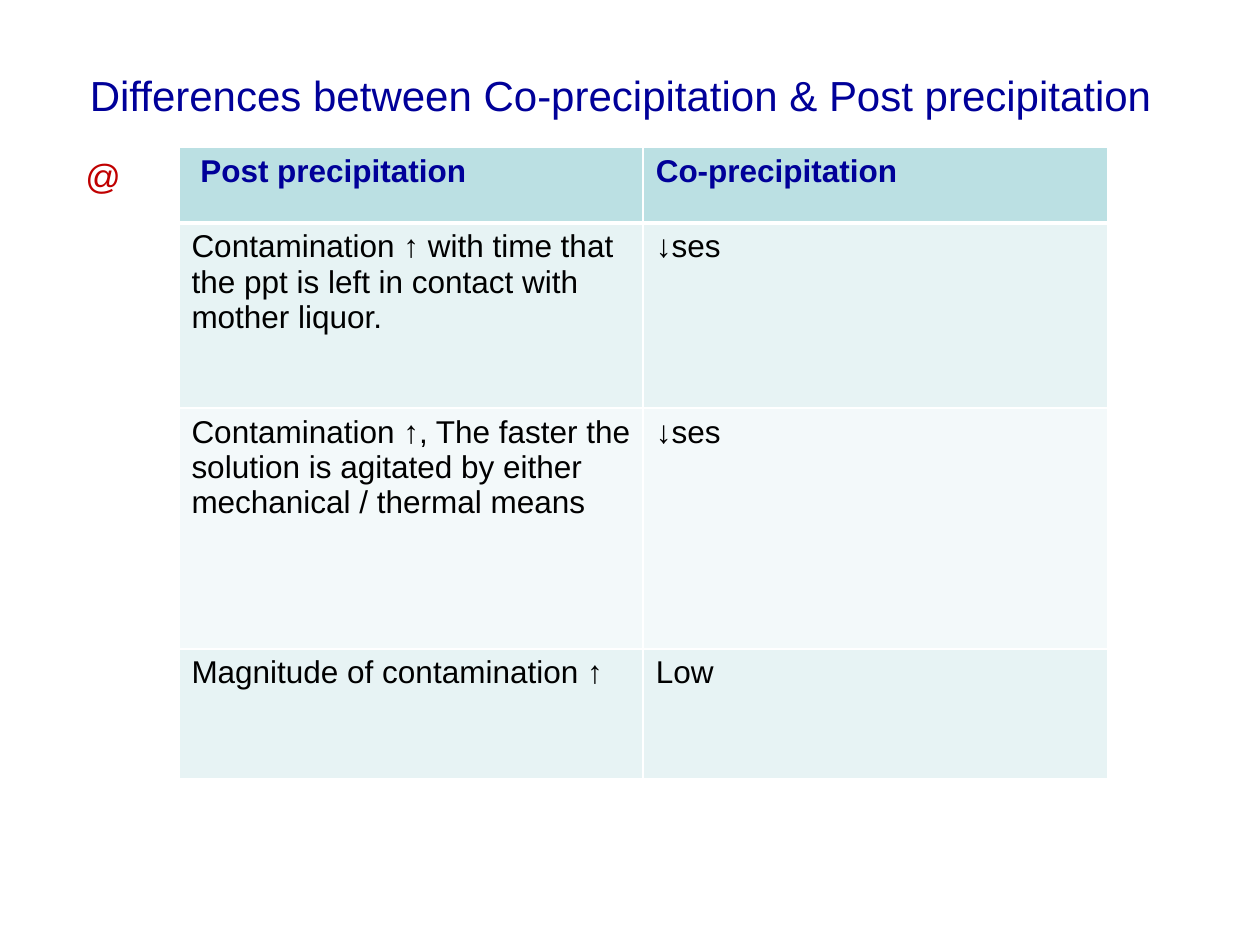
from lxml.etree import SubElement
from pptx import Presentation
from pptx.dml.color import RGBColor
from pptx.enum.text import MSO_ANCHOR, PP_ALIGN
from pptx.oxml.ns import qn
from pptx.util import Inches, Pt

NAVY = RGBColor(0x00, 0x00, 0x99)
RED = RGBColor(0xC0, 0x00, 0x00)
BLACK = RGBColor(0x00, 0x00, 0x00)
WHITE = RGBColor(0xFF, 0xFF, 0xFF)
HEADER_TEAL = RGBColor(0xBB, 0xE0, 0xE3)
BANDS = (RGBColor(0xE7, 0xF3, 0xF4), RGBColor(0xF3, 0xF9, 0xFA))

FONT = "Arial"
ROW_HEIGHTS = (0.6, 1.47, 1.91, 1.03)
COMPARISON = (
    ("Post precipitation", "Co-precipitation"),
    ("Contamination ↑ with time that the ppt is left in contact with mother liquor.",
     "↓ses"),
    ("Contamination ↑, The faster the solution is agitated by either "
     "mechanical / thermal means", "↓ses"),
    ("Magnitude of contamination ↑", "Low"),
)


def style_text(paragraph, size, color, bold=False):
    for run in paragraph.runs:
        run.font.name = FONT
        run.font.size = Pt(size)
        run.font.bold = bold
        run.font.color.rgb = color


def place(part, box):
    part.left, part.top, part.width, part.height = map(Inches, box)


def add_heading(slide, box):
    heading = slide.shapes.title
    place(heading, box)
    frame = heading.text_frame
    frame.text = "Differences between Co-precipitation & Post precipitation"
    frame.word_wrap = True
    frame.vertical_anchor = MSO_ANCHOR.MIDDLE
    frame.paragraphs[0].alignment = PP_ALIGN.CENTER
    style_text(frame.paragraphs[0], 24, NAVY)


def add_marker(slide, box):
    frame = slide.shapes.add_textbox(*map(Inches, box)).text_frame
    frame.word_wrap = True
    frame.text = "@"
    style_text(frame.paragraphs[0], 20, RED)


def set_borders(cell, bottom_width):
    """Draw white cell borders; they must come before the fill in the XML."""
    properties = cell._tc.get_or_add_tcPr()
    widths = {"a:lnL": 1, "a:lnR": 1, "a:lnT": 1, "a:lnB": bottom_width}
    for side, width in widths.items():
        line = SubElement(properties, qn(side), w=str(Pt(width)))
        fill = SubElement(line, qn("a:solidFill"))
        SubElement(fill, qn("a:srgbClr"), val=str(WHITE))


def add_comparison(slide, box):
    frame = slide.shapes.add_table(
        len(COMPARISON), len(COMPARISON[0]), *map(Inches, box))
    table = frame.table
    for column in table.columns:
        column.width = Inches(box[2] / len(COMPARISON[0]))
    for row_index, (height, texts) in enumerate(zip(ROW_HEIGHTS, COMPARISON)):
        table.rows[row_index].height = Inches(height)
        is_header = row_index == 0
        for column_index, text in enumerate(texts):
            cell = table.cell(row_index, column_index)
            cell.text = text
            set_borders(cell, 3 if is_header or row_index == 0 else 1)
            cell.fill.solid()
            cell.fill.fore_color.rgb = (
                HEADER_TEAL if is_header else BANDS[(row_index - 1) % 2])
            style_text(cell.text_frame.paragraphs[0], 18,
                       NAVY if is_header else BLACK, is_header)
    # The first heading sits slightly further in
    table.cell(0, 0).margin_left = Inches(0.17)


def main():
    deck = Presentation()
    deck.slide_width, deck.slide_height = Inches(10), Inches(7.5)
    slide = deck.slides.add_slide(deck.slide_layouts[5])
    add_heading(slide, (0.38, 0.49, 9.09, 0.53))
    add_marker(slide, (0.58, 1.18, 0.8, 0.45))
    add_comparison(slide, (1.42, 1.17, 7.37, sum(ROW_HEIGHTS)))
    deck.save("out.pptx")


if __name__ == "__main__":
    main()
